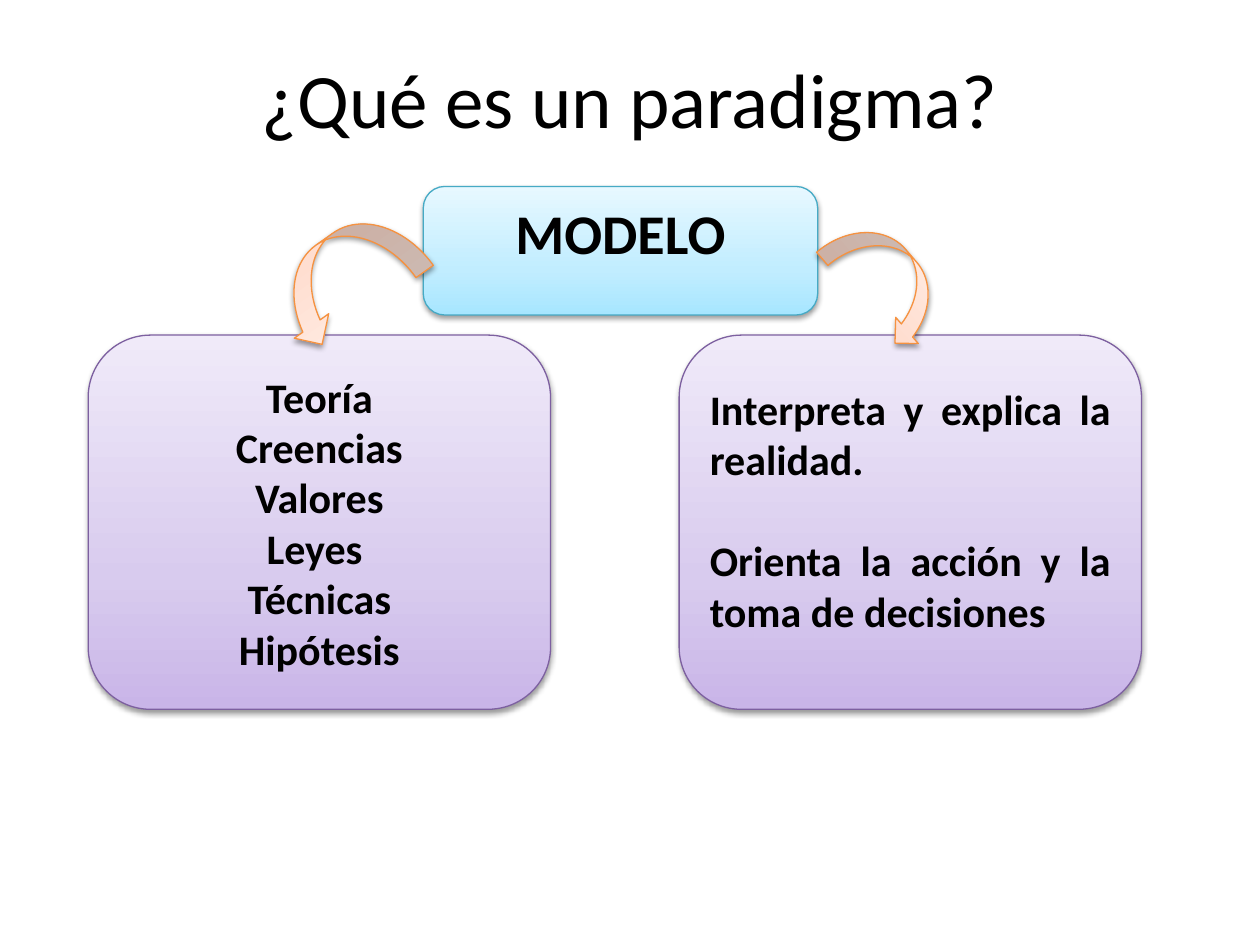
from copy import deepcopy

from lxml import etree
from pptx import Presentation
from pptx.dml.color import RGBColor
from pptx.enum.shapes import MSO_SHAPE
from pptx.enum.text import MSO_ANCHOR, PP_ALIGN
from pptx.oxml.ns import qn
from pptx.util import Inches, Pt

ROUNDED = MSO_SHAPE.ROUNDED_RECTANGLE
CURVED_DOWN = MSO_SHAPE.CURVED_DOWN_ARROW
CURVED_UP = MSO_SHAPE.CURVED_UP_ARROW
CENTER, JUSTIFY = PP_ALIGN.CENTER, PP_ALIGN.JUSTIFY
MIDDLE = MSO_ANCHOR.MIDDLE

BLACK = RGBColor(0x00, 0x00, 0x00)
AQUA_LINE = RGBColor(0x46, 0xAA, 0xC5)
AQUA_STOPS = (RGBColor(0xA7, 0xE6, 0xFF), RGBColor(0xC1, 0xED, 0xFF), RGBColor(0xE7, 0xF8, 0xFF))
PURPLE_LINE = RGBColor(0x7D, 0x60, 0xA0)
PURPLE_STOPS = (RGBColor(0xC9, 0xB5, 0xE8), RGBColor(0xD8, 0xCB, 0xEE), RGBColor(0xF0, 0xEA, 0xF9))
ORANGE_LINE = RGBColor(0xF6, 0x92, 0x40)
ORANGE_STOPS = (RGBColor(0xFF, 0xD2, 0xBD), RGBColor(0xFF, 0xDE, 0xD0), RGBColor(0xFF, 0xF2, 0xED))
AQUA = (AQUA_STOPS, AQUA_LINE)
PURPLE = (PURPLE_STOPS, PURPLE_LINE)
ORANGE = (ORANGE_STOPS, ORANGE_LINE)
STOP_POSITIONS = (0, 0.35, 1)


def write_text(frame, lines, size=24, bold=True, align=CENTER, gap=0, bottom=0.05):
    frame.word_wrap = True
    frame.vertical_anchor = MIDDLE
    frame.margin_bottom = Inches(bottom)
    for index, line in enumerate(lines):
        paragraph = frame.add_paragraph() if index else frame.paragraphs[0]
        paragraph.alignment = align
        paragraph.space_before = Pt(gap if index else 0)
        run = paragraph.add_run()
        run.text = line
        run.font.name = "Calibri"
        run.font.size = Pt(size)
        run.font.bold = bold
        run.font.color.rgb = BLACK


class Diagram:
    """Holds the slide and the glossy style shared by its boxes and arrows."""

    def __init__(self, slide):
        self.slide = slide

    def title(self, text):
        heading = self.slide.shapes.title
        heading.left, heading.top = Inches(0.5), Inches(0.3)
        heading.width, heading.height = Inches(9), Inches(0.95)
        write_text(heading.text_frame, [text], size=44, bold=False)

    def glossy(self, kind, bounds, colors):
        stops, line = colors
        shape = self.slide.shapes.add_shape(kind, *map(Inches, bounds))
        shape.line.color.rgb = line
        shape.line.width = Pt(0.75)
        self.shade(shape, stops)
        self.cast_shadow(shape)
        return shape

    def shade(self, shape, colors):
        shape.fill.gradient()
        shape.fill.gradient_angle = 90
        stop_list = shape.element.spPr.find(qn("a:gradFill")).find(qn("a:gsLst"))
        stop_list.append(deepcopy(stop_list[0]))
        for stop, position, color in zip(shape.fill.gradient_stops, STOP_POSITIONS, colors):
            stop.position = position
            stop.color.rgb = color

    def cast_shadow(self, shape):
        shape.shadow.inherit = False
        effects = shape.element.spPr.find(qn("a:effectLst"))
        shadow = etree.SubElement(effects, qn("a:outerShdw"), blurRad=str(Pt(3.1)),
                                  dist=str(Pt(1.6)), dir="5400000", rotWithShape="0")
        color = etree.SubElement(shadow, qn("a:srgbClr"), val=str(BLACK))
        etree.SubElement(color, qn("a:alpha"), val="38000")

    def box(self, bounds, colors, lines, **text_format):
        write_text(self.glossy(ROUNDED, bounds, colors).text_frame, lines, **text_format)

    def arrow(self, kind, bounds, rotation):
        self.glossy(kind, bounds, ORANGE).rotation = rotation


def main():
    presentation = Presentation()
    presentation.slide_width, presentation.slide_height = Inches(10), Inches(7.5)
    diagram = Diagram(presentation.slides.add_slide(presentation.slide_layouts[5]))
    diagram.title("¿Qué es un paradigma?")
    diagram.box((3.36, 1.48, 3.13, 1.02), AQUA, ["MODELO"], size=32, bottom=0.35)
    column_top, column_width, column_height = 2.66, 3.67, 2.97
    diagram.box((5.39, column_top, column_width, column_height), PURPLE,
                ["Interpreta y explica la realidad.", "Orienta la acción y la toma de decisiones"],
                align=JUSTIFY, gap=29, bottom=0.25)
    diagram.box((0.7, column_top, column_width, column_height), PURPLE,
                ["Teoría", "Creencias", "Valores", "Leyes ", "Técnicas", "Hipótesis"])
    diagram.arrow(CURVED_DOWN, (6.5, 1.96, 1.09, 0.55), 49.2)
    diagram.arrow(CURVED_UP, (2.11, 1.86, 1.25, 0.67), 144.6)
    presentation.save("out.pptx")


if __name__ == "__main__":
    main()
